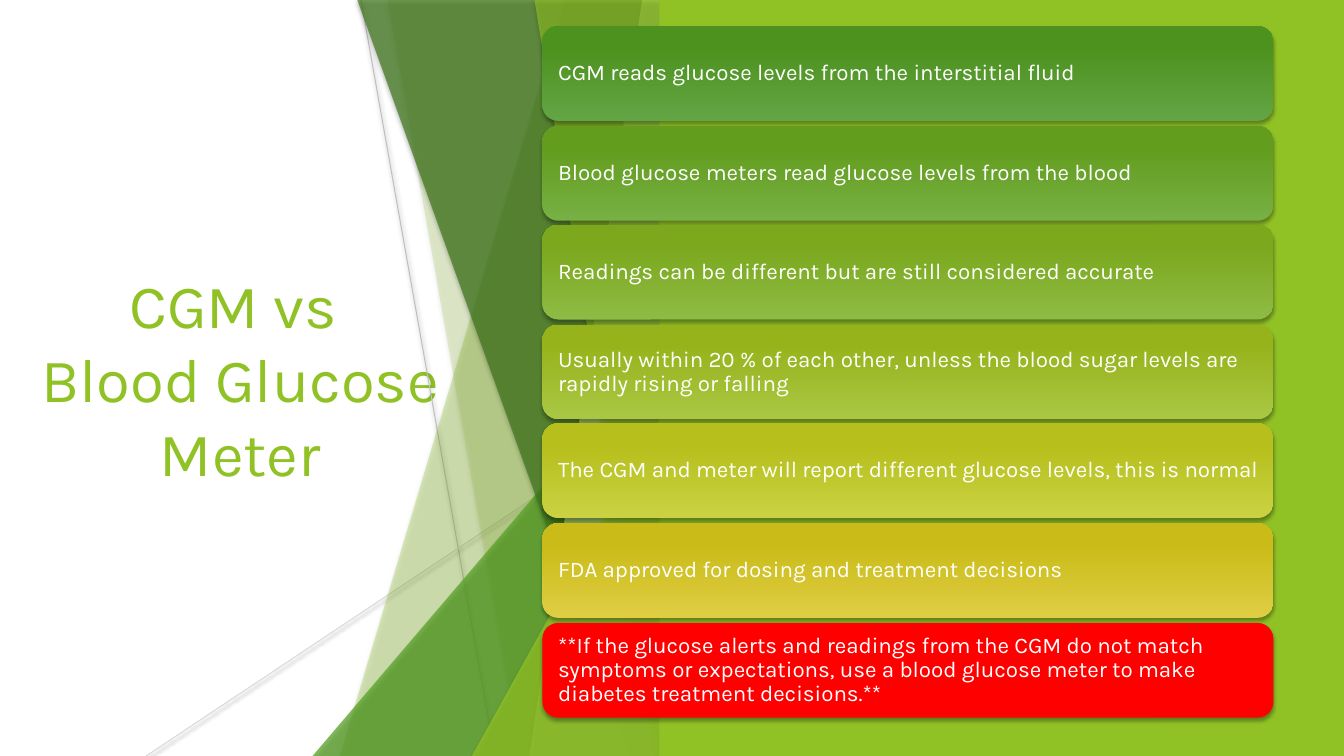
from lxml.etree import SubElement
from pptx import Presentation
from pptx.dml.color import RGBColor as RGB
from pptx.enum.shapes import MSO_CONNECTOR, MSO_SHAPE as SHAPE
from pptx.enum.text import MSO_ANCHOR as ANCHOR, MSO_AUTO_SIZE, PP_ALIGN as ALIGN
from pptx.oxml.ns import qn
from pptx.util import Pt

PX = 9144
WHITE = RGB(0xFF, 0xFF, 0xFF)
BLACK = RGB(0, 0, 0)
RED = RGB(0xFF, 0, 0)
GRAY = RGB(0xBF, 0xBF, 0xBF)
LIGHT_GRAY = RGB(0xD9, 0xD9, 0xD9)
LIME = RGB(0x90, 0xC2, 0x26)
PALE_LIME = RGB(0xC0, 0xE4, 0x74)
GREEN = RGB(0x54, 0xA0, 0x21)
DARK_GREEN = RGB(0x3F, 0x78, 0x19)

LINES = [
    (358, 0, 491, 750, GRAY),
    (666, 403, 145, 750, LIGHT_GRAY),
]
FACETS = [
    ("band", 561, 337, LIME, 30),
    ("band", 384, 516, LIME, 20),
    ("triangle", 310, 333, GREEN, 72),
    ("band", 354, 624, DARK_GREEN, 70),
    ("band", 637, 525, PALE_LIME, 70),
    ("band", 530, 651, LIME, 65),
    ("triangle", 468, 393, LIME, 80),
]
FACET_RIGHT = 666
CARDS = [
    ("CGM reads glucose levels from the interstitial fluid",
     RGB(0x63, 0xA5, 0x45), RGB(0x4D, 0x92, 0x1E)),
    ("Blood glucose meters read glucose levels from the blood",
     RGB(0x77, 0xB0, 0x44), RGB(0x62, 0x9D, 0x1E)),
    ("Readings can be different but are still considered accurate",
     RGB(0x8E, 0xBB, 0x44), RGB(0x7B, 0xA8, 0x1D)),
    ("Usually within 20 % of each other, unless the blood sugar levels are "
     "rapidly rising or falling",
     RGB(0xAA, 0xC7, 0x44), RGB(0x97, 0xB3, 0x1C)),
    ("The CGM and meter will report different glucose levels, this is normal",
     RGB(0xCA, 0xD2, 0x43), RGB(0xB6, 0xBF, 0x1B)),
    ("FDA approved for dosing and treatment decisions",
     RGB(0xDF, 0xCE, 0x43), RGB(0xCA, 0xBB, 0x19)),
    ("**If the glucose alerts and readings from the CGM do not match symptoms "
     "or expectations, use a blood glucose meter to make diabetes treatment "
     "decisions.**", RED, None),
]


class Deck:
    font = "Karla"
    facet_shadow = (35, 3, 2)
    line_shadow = (38, 3.1, 1.6)

    def __init__(self, width, height):
        self.prs = Presentation()
        self.prs.slide_width = width * PX
        self.prs.slide_height = height * PX
        self.slide = self.prs.slides.add_slide(self.prs.slide_layouts[5])
        self.shapes = self.slide.shapes

    def apply(self, obj, values):
        for name, value in values.items():
            setattr(obj, name, value)

    def scale(self, *lengths):
        return [n * PX for n in lengths]

    def effect(self, sp, shadow=None):
        effects = SubElement(sp._element.spPr, qn("a:effectLst"))
        if shadow:
            alpha, blur, dist = shadow
            outer = SubElement(effects, qn("a:outerShdw"), blurRad=str(Pt(blur)),
                               dist=str(Pt(dist)), dir="5400000", rotWithShape="0")
            color = SubElement(outer, qn("a:srgbClr"), val=str(BLACK))
            SubElement(color, qn("a:alpha"), val=str(alpha * 1000))

    def paint(self, sp, color, opacity=100, shadow=None):
        sp.fill.solid()
        sp.fill.fore_color.rgb = color
        if opacity < 100:
            clr = sp._element.spPr.find(".//" + qn("a:srgbClr"))
            SubElement(clr, qn("a:alpha"), val=str(opacity * 1000))
        sp.line.fill.background()
        self.effect(sp, shadow)

    def text(self, sp, text, size, color, frame, para):
        tf = sp.text_frame
        tf.text = text
        self.apply(tf, {"word_wrap": True, "vertical_anchor": ANCHOR.MIDDLE, **frame})
        p = tf.paragraphs[0]
        self.apply(p, para)
        for r in p.runs:
            self.apply(r.font, {"name": self.font, "size": Pt(size)})
            r.font.color.rgb = color

    def title(self, text, x, y, w, h):
        sp = self.shapes.title
        box = self.scale(x, y, w, h)
        self.apply(sp, dict(zip(("left", "top", "width", "height"), box)))
        self.text(sp, text, 44, LIME, {"auto_size": MSO_AUTO_SIZE.NONE},
                  {"alignment": ALIGN.CENTER})

    def line(self, x1, y1, x2, y2, color):
        sp = self.shapes.add_connector(MSO_CONNECTOR.STRAIGHT,
                                       *self.scale(x1, y1, x2, y2))
        sp.line.color.rgb = color
        sp.line.width = Pt(0.75)
        self.effect(sp, self.line_shadow)

    def band(self, top_x, bottom_x, color, opacity):
        fb = self.shapes.build_freeform(top_x, -1, PX)
        fb.add_line_segments([(FACET_RIGHT, -1), (FACET_RIGHT, 750), (bottom_x, 750)])
        self.paint(fb.convert_to_shape(), color, opacity, self.facet_shadow)

    def triangle(self, x, y, color, opacity):
        sp = self.shapes.add_shape(SHAPE.ISOSCELES_TRIANGLE,
                                   *self.scale(x, y, FACET_RIGHT - x, 750 - y))
        sp.adjustments[0] = 1
        self.paint(sp, color, opacity, self.facet_shadow)

    def panel(self, x, y, w, h, color):
        sp = self.shapes.add_shape(SHAPE.RECTANGLE, *self.scale(x, y, w, h))
        self.paint(sp, color)

    def card(self, text, x, y, w, h, bottom, top):
        sp = self.shapes.add_shape(SHAPE.ROUNDED_RECTANGLE, *self.scale(x, y, w, h))
        self.paint(sp, bottom, shadow=self.facet_shadow)
        if top:
            sp.fill.gradient()
            sp.fill.gradient_angle = 90
            for stop, color, position in zip(sp.fill.gradient_stops,
                                             (bottom, top), (0, 0.78)):
                stop.color.rgb = color
                stop.position = position
        margins = zip(("left", "top", "right", "bottom"), self.scale(11, 11, 7, 11))
        self.text(sp, text, 16, WHITE,
                  {f"margin_{side}": size for side, size in margins},
                  {"alignment": ALIGN.LEFT, "line_spacing": 0.9,
                   "space_after": Pt(5.6)})

    def save(self):
        self.prs.save("out.pptx")


def main():
    deck = Deck(1333, 750)
    deck.title("CGM vs \vBlood Glucose Meter", 27, 151, 423, 448)
    for line in LINES:
        deck.line(*line)
    draw = {"band": deck.band, "triangle": deck.triangle}
    for kind, *facet in FACETS:
        draw[kind](*facet)
    deck.panel(654, 0, 679, 750, LIME)
    for i, (text, bottom, top) in enumerate(CARDS):
        deck.card(text, 538, 26 + round(98.6 * i), 725, 94, bottom, top)
    deck.save()


if __name__ == "__main__":
    main()
